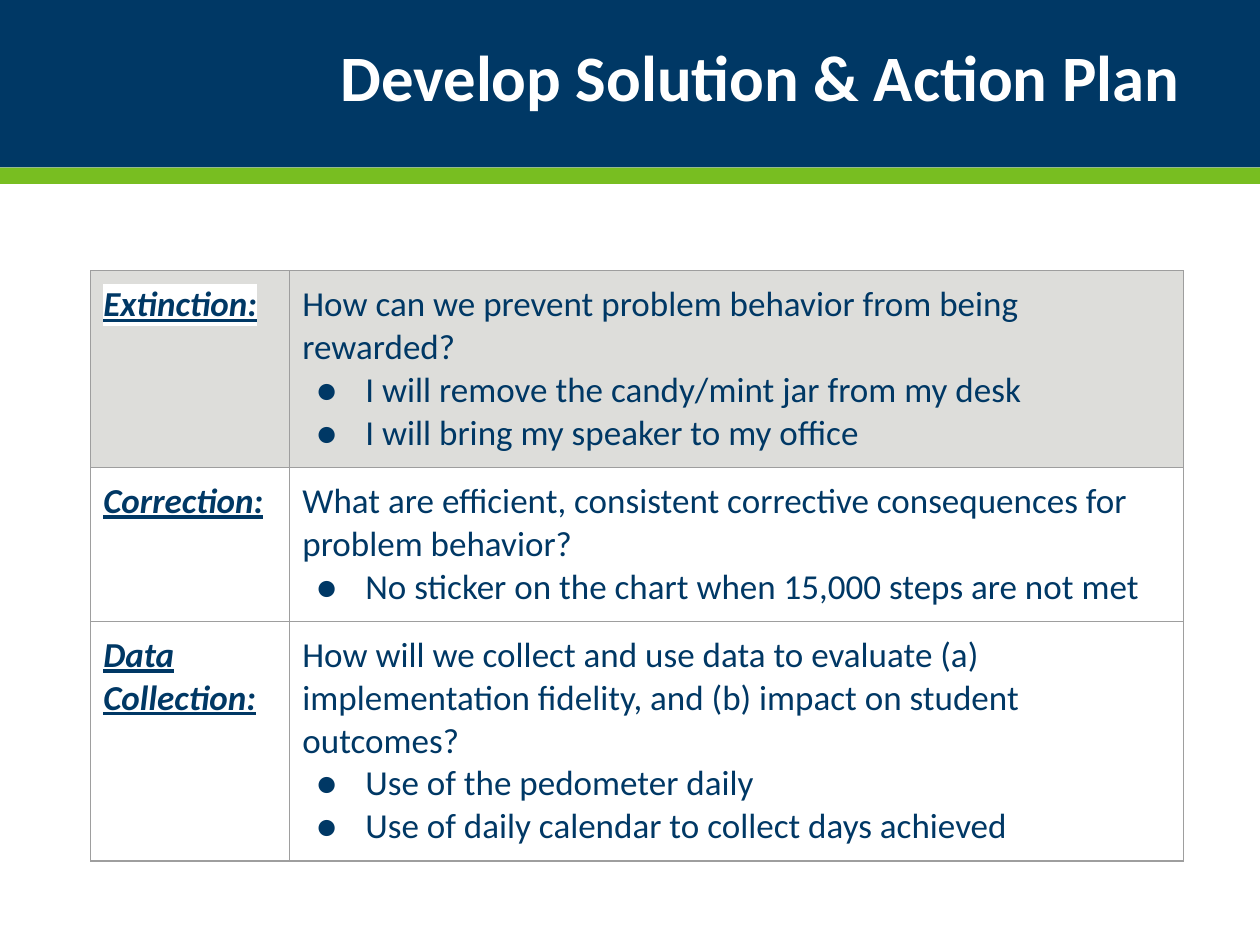
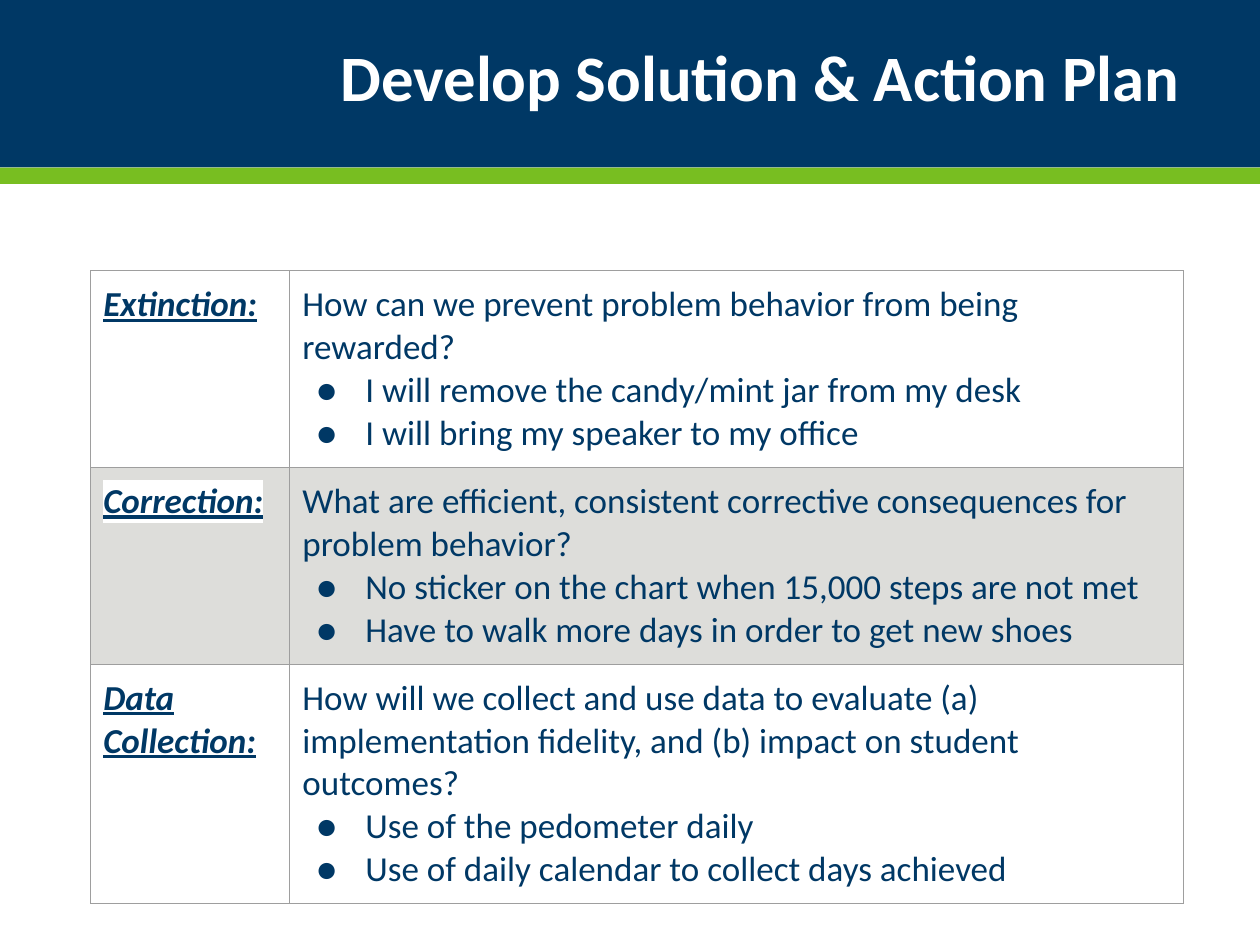
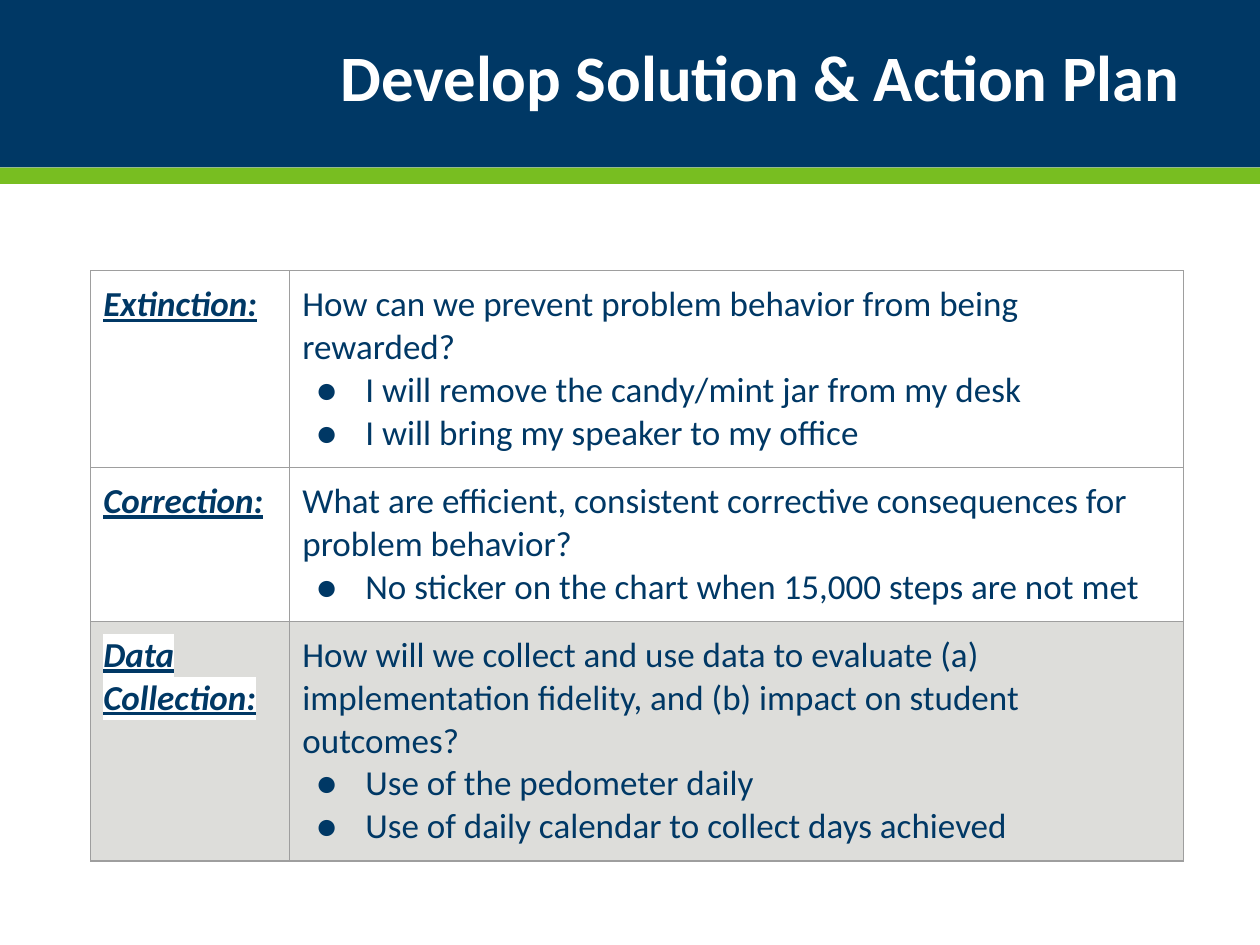
from dataclasses import dataclass

from lxml.etree import SubElement
from pptx import Presentation
from pptx.dml.color import RGBColor
from pptx.enum.shapes import MSO_SHAPE
from pptx.enum.text import MSO_ANCHOR, MSO_AUTO_SIZE, PP_ALIGN
from pptx.oxml.ns import qn
from pptx.util import Inches, Pt


@dataclass(frozen=True)
class Theme:
    navy: str = "003865"
    green: str = "78BE21"
    white: str = "FFFFFF"
    shade: str = "DDDDDA"
    rule: str = "9E9E9E"
    font: str = "Calibri"
    head: float = 37
    body: float = 20
    line: float = 0.75


@dataclass(frozen=True)
class Band:
    top: float
    height: float
    color: str


@dataclass(frozen=True)
class Step:
    label: str
    ask: str
    items: tuple[str, ...]


@dataclass(frozen=True)
class Plan:
    steps: tuple[Step, ...]
    focus: int
    height: float


THEME = Theme()
TITLE = "Develop Solution & Action Plan"
BANDS = (Band(0, 1.33, THEME.navy), Band(1.33, 0.13, THEME.green))
COLS = (1.58, 7.09)
ROW = 0.66
PAD = 0.1

STOP = Step(
    "Extinction:",
    "How can we prevent problem behavior from being rewarded?",
    ("I will remove the candy/mint jar from my desk", "I will bring my speaker to my office"),
)
FIX = Step(
    "Correction:",
    "What are efficient, consistent corrective consequences for problem behavior?",
    ("No sticker on the chart when 15,000 steps are not met",),
)
MORE = Step(FIX.label, FIX.ask, FIX.items + ("Have to walk more days in order to get new shoes",))
DATA = Step(
    "Data Collection:",
    "How will we collect and use data to evaluate (a) implementation fidelity, "
    "and (b) impact on student outcomes?",
    ("Use of the pedometer daily", "Use of daily calendar to collect days achieved"),
)
PLANS = (
    Plan((STOP, FIX, DATA), 0, 4.6),
    Plan((STOP, MORE, DATA), 1, 4.93),
    Plan((STOP, FIX, DATA), 2, 4.6),
)


def style(font, size: float, color: str) -> None:
    """Set the face, size and colour of a font."""
    font.size = Pt(size)
    font.color.rgb = RGBColor.from_string(color)
    font.name = THEME.font


def tint(parent, tag: str, color: str):
    """Add a colour holder to an XML parent."""
    node = SubElement(parent, qn(tag))
    SubElement(node, qn("a:srgbClr"), val=color)
    return node


def add_bands(slide, layout, width: int) -> None:
    """Draw the header bands and move them to the shared layout."""
    for place, band in enumerate(BANDS):
        shape = slide.shapes.add_shape(
            MSO_SHAPE.RECTANGLE, 0, Inches(band.top), width, Inches(band.height)
        )
        shape.shadow.inherit = False
        shape.fill.solid()
        shape.fill.fore_color.rgb = RGBColor.from_string(band.color)
        shape.line.fill.background()
        layout.shapes.element.insert(2 + place, shape.element)


def add_title(slide) -> None:
    """Place and format the slide title."""
    title = slide.shapes.title
    title.left, title.top = Inches(0.4), Inches(0.14)
    title.width, title.height = Inches(9.03), Inches(1)
    frame = title.text_frame
    frame.text = TITLE
    frame.word_wrap = True
    frame.auto_size = MSO_AUTO_SIZE.NONE
    frame.vertical_anchor = MSO_ANCHOR.MIDDLE
    frame.margin_left = frame.margin_right = Inches(0.07)
    frame.margin_top = frame.margin_bottom = Inches(0.04)
    para = frame.paragraphs[0]
    para.alignment = PP_ALIGN.RIGHT
    para.line_spacing = 0.9
    font = para.runs[0].font
    style(font, THEME.head, THEME.white)
    font.bold = True


def dress(cell, fill: bool) -> None:
    """Give a cell its margins, borders and fill."""
    cell.margin_left = cell.margin_right = Inches(PAD)
    cell.margin_top = cell.margin_bottom = Inches(PAD)
    props = cell._tc.get_or_add_tcPr()
    for side in "LRTB":
        edge = SubElement(props, qn(f"a:ln{side}"), w=str(Pt(THEME.line)))
        tint(edge, "a:solidFill", THEME.rule)
    if fill:
        cell.fill.solid()
        cell.fill.fore_color.rgb = RGBColor.from_string(THEME.shade)
    else:
        cell.fill.background()


def add_label(cell, text: str) -> None:
    """Write a highlighted step name."""
    cell.text_frame.text = text
    run = cell.text_frame.paragraphs[0].runs[0]
    style(run.font, THEME.body, THEME.navy)
    run.font.bold = run.font.italic = run.font.underline = True
    props = run.font._element
    mark = tint(props, "a:highlight", THEME.white)
    props.find(qn("a:solidFill")).addnext(mark)


def add_bullet(para) -> None:
    """Give a paragraph a hanging round bullet."""
    props = para._p.get_or_add_pPr()
    props.set("marL", str(Inches(0.5)))
    props.set("indent", str(Inches(-0.39)))
    tint(props, "a:buClr", THEME.navy)
    SubElement(props, qn("a:buFont"), typeface=THEME.font)
    SubElement(props, qn("a:buChar"), char="●")


def add_notes(cell, step: Step) -> None:
    """Write the question and its bulleted answers."""
    frame = cell.text_frame
    frame.text = "\n".join((step.ask, *step.items))
    for para in frame.paragraphs[1:]:
        add_bullet(para)
    for para in frame.paragraphs:
        style(para.runs[0].font, THEME.body, THEME.navy)


def add_plan(slide, plan: Plan) -> None:
    """Draw the table of steps with the step in focus shaded."""
    frame = slide.shapes.add_table(
        len(plan.steps), len(COLS), Inches(0.72), Inches(2.15), Inches(sum(COLS)), Inches(plan.height)
    )
    table = frame.table
    table.first_row = table.horz_banding = False
    for col, width in zip(table.columns, COLS):
        col.width = Inches(width)
    for index, (row, step) in enumerate(zip(table.rows, plan.steps)):
        row.height = Inches(ROW)
        label, notes = row.cells
        add_label(label, step.label)
        add_notes(notes, step)
        for cell in row.cells:
            dress(cell, index == plan.focus)
    frame.height = Inches(plan.height)


def main() -> None:
    """Build and save the deck."""
    deck = Presentation()
    deck.slide_width, deck.slide_height = Inches(10), Inches(7.5)
    layout = deck.slide_layouts.get_by_name("Title Only")
    for plan in PLANS:
        slide = deck.slides.add_slide(layout)
        add_title(slide)
        add_plan(slide, plan)
    add_bands(slide, layout, deck.slide_width)
    deck.save("out.pptx")


if __name__ == "__main__":
    main()
